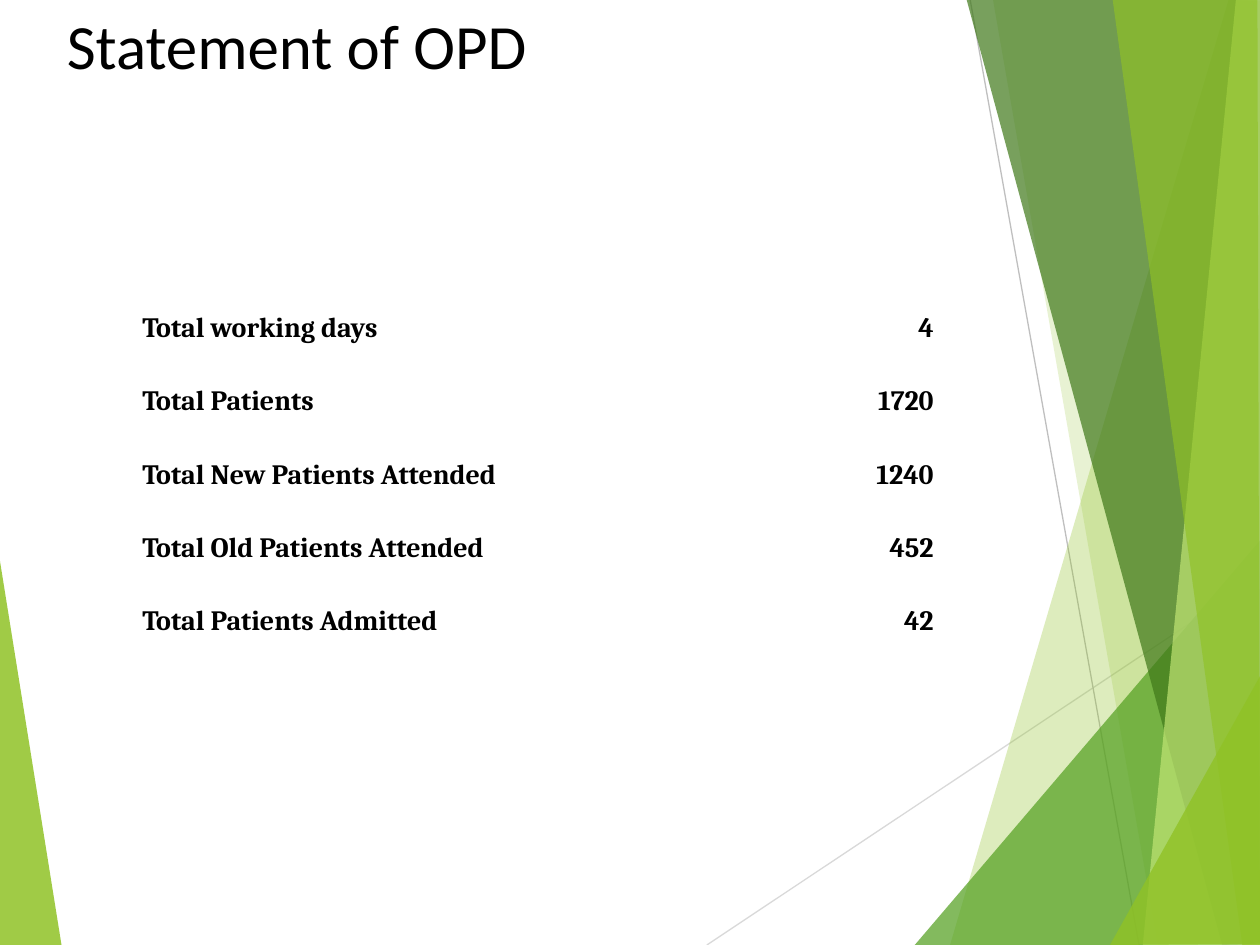
import pptx
import pptx.util
import pptx.dml.color
import pptx.enum.shapes
import pptx.enum.text
import pptx.oxml
import pptx.oxml.ns
import lxml.etree

Inches = pptx.util.Inches
Pt = pptx.util.Pt
RGBColor = pptx.dml.color.RGBColor
PP_ALIGN = pptx.enum.text.PP_ALIGN
MSO_ANCHOR = pptx.enum.text.MSO_ANCHOR
qn = pptx.oxml.ns.qn

BLACK = RGBColor(0x00, 0x00, 0x00)
LIME = RGBColor(0x90, 0xC2, 0x26)
PALE_LIME = RGBColor(0xC0, 0xE4, 0x74)
GREEN = RGBColor(0x54, 0xA0, 0x21)
DARK_GREEN = RGBColor(0x3F, 0x78, 0x19)
LIGHT_GRAY = RGBColor(0xD9, 0xD9, 0xD9)
GRAY = RGBColor(0xBF, 0xBF, 0xBF)

LEFT_FACET = ([(-0.01, 4.39), (0.49, 7.51), (-0.01, 7.5)], LIME, 85)
RIGHT_FACETS = [
    ([(9.75, 0), (7.54, 7.5), (10.02, 7.51), (10.01, 0.01)], LIME, 30),
    ([(7.88, -0.01), (9.19, 7.5), (10.01, 7.5), (10.01, -0.01)], LIME, 20),
    ([(7.26, 7.5), (10, 4.29), (10.01, 7.5)], GREEN, 72),
    ([(7.67, -0.01), (9.7, 7.5), (10.01, 7.49), (10.01, -0.01)], DARK_GREEN, 70),
    ([(9.81, -0.01), (9.07, 7.5), (10.01, 7.5), (10, -0.01)], PALE_LIME, 70),
    ([(8.83, -0.01), (9.86, 7.5), (10, 7.5), (9.98, -0.01)], LIME, 65),
    ([(8.81, 7.5), (10.01, 5.35), (10.01, 7.49)], LIME, 80),
]
OPD_ROWS = [
    ("Total working days", "4"),
    ("Total Patients", "1720"),
    ("Total New Patients Attended", "1240"),
    ("Total Old Patients Attended", "452"),
    ("Total Patients Admitted", "42"),
]


def add_facet(slide, points, color, opacity):
    """Add a borderless polygon; points are in inches, opacity in percent."""
    corners = [(Inches(x), Inches(y)) for x, y in points]
    builder = slide.shapes.build_freeform(*corners[0])
    builder.add_line_segments(corners[1:], close=True)
    sp = builder.convert_to_shape()
    sp.shadow.inherit = False
    sp.line.fill.background()
    sp.fill.solid()
    sp.fill.fore_color.rgb = color
    clr = sp.element.spPr.find(qn("a:solidFill"))[0]
    lxml.etree.SubElement(clr, qn("a:alpha")).set("val", str(opacity * 1000))


def add_line(slide, start, end, color):
    line = slide.shapes.add_connector(
        pptx.enum.shapes.MSO_CONNECTOR.STRAIGHT,
        *(Inches(v) for v in start + end))
    line.line.color.rgb = color
    line.line.width = Pt(0.75)
    lxml.etree.SubElement(line.element.spPr, qn("a:effectLst"))


def add_run(p, text, font, size, bold=False):
    r = p.add_run()
    r.text = text
    r.font.name = font
    r.font.size = Pt(size)
    r.font.bold = bold
    r.font.color.rgb = BLACK


def add_title(slide, text):
    title = slide.shapes.title
    title.left, title.top = Inches(0.43), Inches(0)
    title.width, title.height = Inches(9), Inches(1.25)
    tf = title.text_frame
    tf.word_wrap = True
    tf.auto_size = pptx.enum.text.MSO_AUTO_SIZE.NONE
    tf.vertical_anchor = MSO_ANCHOR.TOP
    p = tf.paragraphs[0]
    p.alignment = PP_ALIGN.LEFT
    add_run(p, text, "Calibri", 36)
    # Keep the title in front of the background facets
    slide.shapes.element.append(title.element)


def fill_cell(cell, text, alignment):
    cell.fill.background()
    cell.vertical_anchor = MSO_ANCHOR.MIDDLE
    cell.margin_left = cell.margin_right = Inches(0.07)
    cell.margin_top = cell.margin_bottom = 0
    p = cell.text_frame.paragraphs[0]
    p.alignment = alignment
    p.line_spacing = 1.13
    add_run(p, text, "Cambria", 16, bold=True)


def add_opd_table(slide, rows):
    """Add the unfilled table; its white borders come from the table style."""
    table = slide.shapes.add_table(
        len(rows), 2, Inches(1.06), Inches(2.3), Inches(6.42), Inches(2.91)).table
    for i, (label, count) in enumerate(rows):
        fill_cell(table.cell(i, 0), label, PP_ALIGN.JUSTIFY)
        fill_cell(table.cell(i, 1), count, PP_ALIGN.RIGHT)


def main():
    prs = pptx.Presentation()
    prs.slide_width, prs.slide_height = Inches(10), Inches(7.5)
    slide = prs.slides.add_slide(prs.slide_layouts.get_by_name("Title Only"))
    add_facet(slide, *LEFT_FACET)
    add_line(slide, (5.61, 7.5), (10.01, 4.57), LIGHT_GRAY)
    add_line(slide, (7.7, 0), (9.04, 7.5), GRAY)
    for facet in RIGHT_FACETS:
        add_facet(slide, *facet)
    add_title(slide, "Statement of OPD")
    add_opd_table(slide, OPD_ROWS)
    prs.save("out.pptx")


if __name__ == "__main__":
    main()
